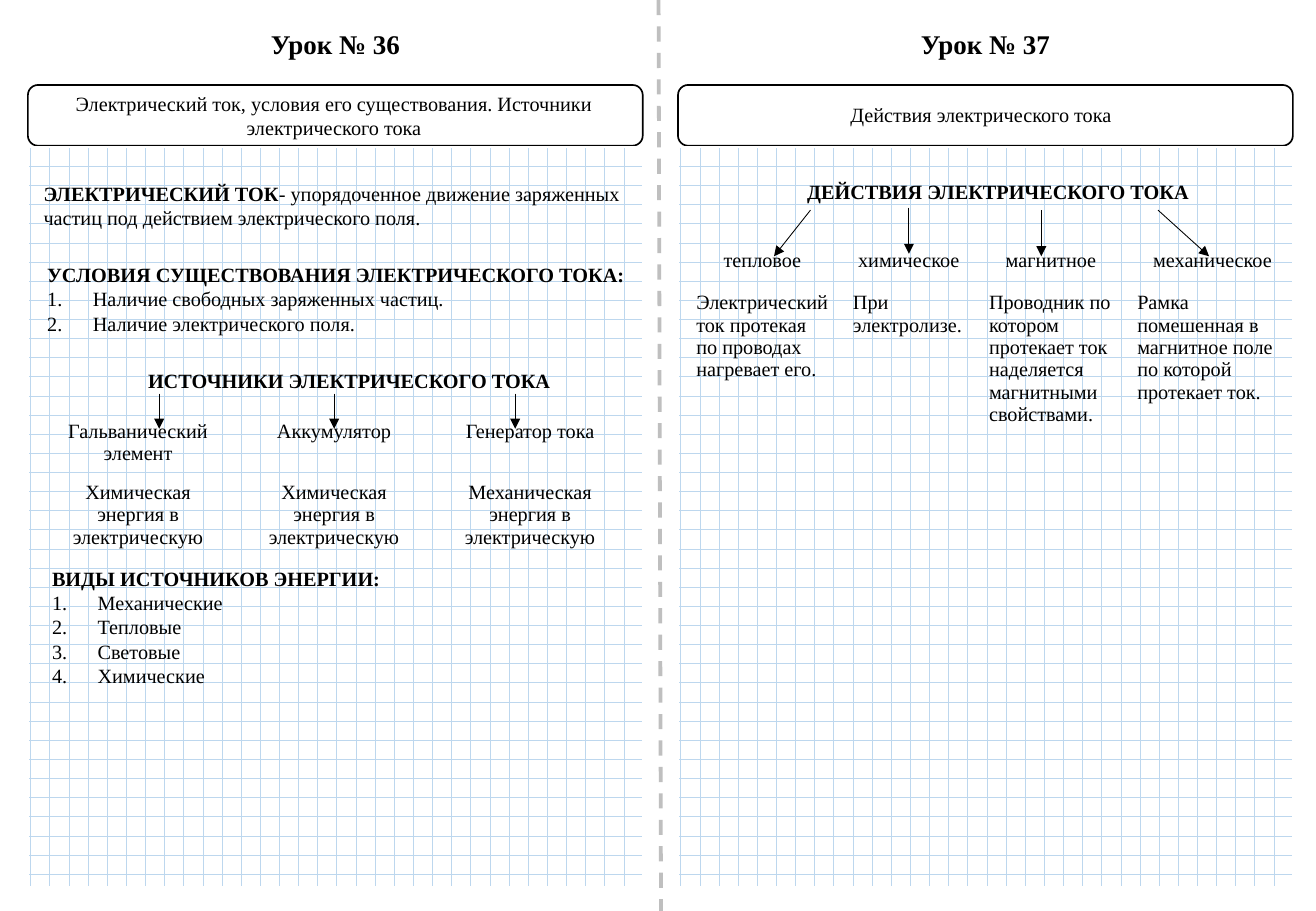
from dataclasses import dataclass

from lxml import etree
from pptx import Presentation
from pptx.dml.color import RGBColor
from pptx.enum.dml import MSO_LINE, MSO_PATTERN
from pptx.enum.shapes import MSO_CONNECTOR, MSO_SHAPE
from pptx.enum.text import MSO_ANCHOR, MSO_AUTO_SIZE, PP_ALIGN
from pptx.oxml.ns import qn
from pptx.util import Inches, Pt

LEFT, CENTER = PP_ALIGN.LEFT, PP_ALIGN.CENTER
TOP, MIDDLE = MSO_ANCHOR.TOP, MSO_ANCHOR.MIDDLE
FIT_SHAPE = MSO_AUTO_SIZE.SHAPE_TO_FIT_TEXT
STRAIGHT = MSO_CONNECTOR.STRAIGHT
TOPIC_FRAME = MSO_SHAPE.FLOWCHART_ALTERNATE_PROCESS
SHEET = MSO_SHAPE.FLOWCHART_PROCESS
DOTTED_GRID, DASH = MSO_PATTERN.DOTTED_GRID, MSO_LINE.DASH
NO_GRID_STYLE = "{2D5ABB26-0587-4C30-8999-92F81FD0307C}"
STEP = 0.1
PAGE_X, PAGE_W = (2.3, 55.8), 50.6


@dataclass(frozen=True)
class Theme:
    """Colours, font and sizes of the lesson notes."""
    font: str = "Times New Roman"
    ink: RGBColor = RGBColor(0, 0, 0)
    paper: RGBColor = RGBColor(255, 255, 255)
    squares: RGBColor = RGBColor(0xBD, 0xD7, 0xEE)
    fold: RGBColor = RGBColor(0xBF, 0xBF, 0xBF)
    title: int = 16
    body: int = 12
    outline: float = 1
    arrow: float = 0.5
    fold_width: float = 2.25
    indent: float = 3.75


class Notebook:
    """Draws notebook elements on one slide, in grid steps."""

    def __init__(self, prs, theme):
        """Add the slide that the elements go on."""
        self.theme = theme
        self.s = prs.slides.add_slide(prs.slide_layouts[5])

    def grid(self, *steps):
        """Turn grid steps into lengths."""
        return [Inches(step * STEP) for step in steps]

    def style(self, p, size, bold=False, align=LEFT):
        """Set the font and alignment of a paragraph."""
        p.alignment = align
        p.font.name, p.font.size, p.font.bold = self.theme.font, Pt(size), bold
        p.font.color.rgb = self.theme.ink

    def title(self, text, box):
        """Put the lesson number in the title placeholder."""
        sp = self.s.shapes.title
        sp.left, sp.top, sp.width, sp.height = self.grid(*box)
        self.fill_text(sp.text_frame, [text], self.theme.title, True, CENTER)

    def text(self, box, lines, size=None, bold=False, align=LEFT):
        """Add a text box and return its paragraphs."""
        sp = self.s.shapes.add_textbox(*self.grid(*box))
        return self.fill_text(sp.text_frame, lines, size or self.theme.body, bold, align)

    def fill_text(self, tf, lines, size, bold, align):
        """Write one paragraph per line."""
        tf.word_wrap, tf.auto_size, tf.vertical_anchor = True, FIT_SHAPE, TOP
        for i, line in enumerate(lines):
            p = tf.paragraphs[0] if i == 0 else tf.add_paragraph()
            p.text = line
            self.style(p, size, bold, align)
        return tf.paragraphs

    def numbered(self, box, heading, items):
        """Add a bold heading with a numbered list below."""
        first, *rest = self.text(box, [heading, *items])
        first.font.bold = True
        indent = self.grid(self.theme.indent)[0]
        for p in rest:
            pPr = p._p.get_or_add_pPr()
            pPr.set("marL", str(indent))
            pPr.set("indent", str(-indent))
            number = etree.Element(qn("a:buAutoNum"), type="arabicPeriod")
            pPr.insert(0, number)

    def shape(self, kind, box, line):
        """Add an outlined shape filled with paper."""
        sp = self.s.shapes.add_shape(kind, *self.grid(*box))
        sp.shadow.inherit = False
        sp.fill.solid()
        sp.fill.fore_color.rgb = self.theme.paper
        sp.line.color.rgb, sp.line.width = line, Pt(self.theme.outline)
        return sp

    def sheet(self, box):
        """Add a sheet of squared paper."""
        fill = self.shape(SHEET, box, self.theme.paper).fill
        fill.patterned()
        fill.pattern = DOTTED_GRID
        fill.fore_color.rgb, fill.back_color.rgb = self.theme.squares, self.theme.paper

    def line(self, ends, color, width):
        """Add a straight line without a shadow."""
        cn = self.s.shapes.add_connector(STRAIGHT, *self.grid(*ends))
        cn.line.color.rgb, cn.line.width = color, Pt(width)
        etree.SubElement(cn._element.spPr, qn("a:effectLst"))
        return cn

    def fold(self, ends):
        """Add the dashed fold between the pages."""
        self.line(ends, self.theme.fold, self.theme.fold_width).line.dash_style = DASH

    def arrow(self, ends):
        """Add a thin arrow."""
        cn = self.line(ends, self.theme.ink, self.theme.arrow)
        etree.SubElement(cn.line._get_or_add_ln(), qn("a:tailEnd"), type="triangle")

    def table(self, at, widths, heights, rows, formats):
        """Add a table without borders, one format per row."""
        box = (*at, sum(widths), sum(heights))
        table = self.s.shapes.add_table(len(rows), len(widths), *self.grid(*box)).table
        table.first_row = table.horz_banding = False
        table._tbl.tblPr.find(qn("a:tableStyleId")).text = NO_GRID_STYLE
        for column, width in zip(table.columns, self.grid(*widths)):
            column.width = width
        for row, height, texts, (align, anchor) in zip(
                table.rows, self.grid(*heights), rows, formats):
            row.height = height
            for cell, text in zip(row.cells, texts):
                cell.fill.background()
                cell.text, cell.vertical_anchor = text, anchor
                self.style(cell.text_frame.paragraphs[0], self.theme.body, align=align)


def main():
    """Build the two notebook pages."""
    prs = Presentation()
    prs.slide_width, prs.slide_height = Inches(10.83), Inches(7.5)
    theme = Theme()
    n = Notebook(prs, theme)
    left, right = PAGE_X

    n.fold((54.2, 0, 54.4, 75))
    n.title("Урок № 36", (left, 1.8, PAGE_W, 3.7))
    n.text((right, 1.8, PAGE_W, 3.7), ["Урок № 37"], theme.title, True, CENTER)
    for x in PAGE_X:
        n.shape(TOPIC_FRAME, (x, 7, PAGE_W, 5), theme.ink)
        n.sheet((x, 12.1, PAGE_W, 60.9))

    n.text((3.3, 7, 48.4, 5), [
        "Электрический ток, условия его существования. Источники электрического тока"],
        align=CENTER)
    p = n.text((2.6, 14.4, 52.5, 5), ["ЭЛЕКТРИЧЕСКИЙ ТОК"])[0]
    p.runs[0].font.bold = True
    p.add_run().text = "- упорядоченное движение заряженных частиц под действием электрического поля."
    n.numbered((2.9, 21.1, 50, 7.1), "УСЛОВИЯ СУЩЕСТВОВАНИЯ ЭЛЕКТРИЧЕСКОГО ТОКА:", [
        "Наличие свободных заряженных частиц.", "Наличие электрического поля."])
    n.text((11.2, 29.8, 35.7, 3), ["ИСТОЧНИКИ ЭЛЕКТРИЧЕСКОГО ТОКА"], bold=True)
    n.table((3.3, 34.1), [16.13] * 3, [5, 7], [
        ["Гальванический элемент", "Аккумулятор", "Генератор тока"],
        [f"{energy} энергия в электрическую"
         for energy in ("Химическая", "Химическая", "Механическая")],
    ], [(CENTER, TOP)] * 2)
    for x in (13.1, 27.5, 42.4):
        n.arrow((x, 32.4, x, 35.3))
    n.numbered((3.3, 46.1, 40.4, 14.1), "ВИДЫ ИСТОЧНИКОВ ЭНЕРГИИ:", [
        "Механические", "Тепловые", "Световые", "Химические"])

    n.text((55.1, 7.9, 51.3, 3), ["Действия электрического тока"], align=CENTER)
    n.text((63, 14.3, 38.3, 3), ["ДЕЙСТВИЯ ЭЛЕКТРИЧЕСКОГО ТОКА"], bold=True, align=CENTER)
    n.table((56.3, 19.4), [12.9, 11.2, 12.2, 14.4], [4.1, 13], [
        ["тепловое", "химическое", "магнитное", "механическое"],
        ["Электрический ток протекая по проводах нагревает его.",
         "При электролизе.",
         "Проводник по котором протекает ток наделяется магнитными свойствами.",
         "Рамка помешенная в магнитное поле по которой протекает ток."],
    ], [(CENTER, MIDDLE), (LEFT, TOP)])
    for start, end, y in ((66.7, 63.7, 17.3), (74.8, 74.8, 17.1),
                          (85.7, 85.7, 17.3), (95.3, 99.5, 17.3)):
        n.arrow((start, y, end, y + 3.8))

    prs.save("out.pptx")


if __name__ == "__main__":
    main()
